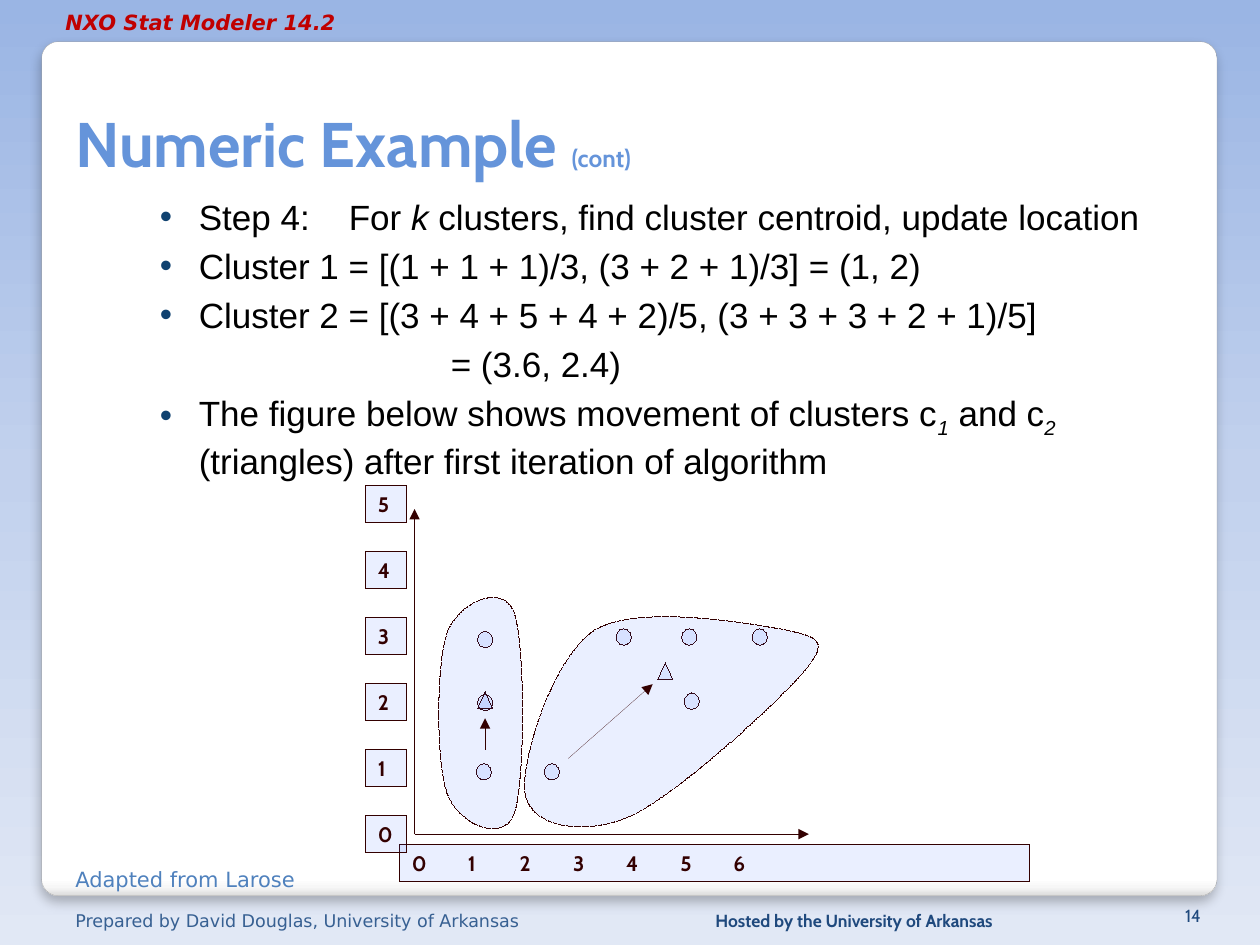
from lxml import etree
from pptx import Presentation, util as u
from pptx.dml.color import RGBColor
from pptx.enum import dml, shapes as kinds, text
from pptx.oxml.ns import qn

COLORS = {
    "ink": "000000", "title": "6594DA", "navy": "1F497D", "steel": "376092",
    "credit": "4F81BD", "red": "C00000", "bullet": "104270",
    "figure": "330000", "tint": "3366FF", "frame": "A4A4A4",
}
deck = Presentation()
deck.slide_width, deck.slide_height = u.Inches(10), u.Inches(7.5)
cell = deck.slide_width / 100
slide = deck.slides.add_slide(deck.slide_layouts[6])
canvas = slide.shapes


def draw_style(shape):
    shape.shadow.inherit = False
    shape.fill.solid()
    shape.fill.fore_color.rgb = RGBColor.from_string(COLORS["tint"])
    tint = shape._element.spPr.find(qn("a:solidFill"))[0]
    etree.SubElement(tint, qn("a:alpha"), val="10000")
    shape.line.color.rgb = RGBColor.from_string(COLORS["figure"])
    shape._element.spPr.find(qn("a:ln")).set("w", "0")


def write(paragraph, words, size, face, color, bold=False):
    paragraph.alignment = text.PP_ALIGN.LEFT
    font = paragraph.font
    font.size, font.name, font.bold = u.Pt(size), face, bold
    font.color.rgb = RGBColor.from_string(COLORS[color])
    for words_part, look in words:
        run = paragraph.add_run()
        run.text = words_part
        if "italic" in look:
            run.font.italic = True
        if "sub" in look:
            run._r.get_or_add_rPr().set("baseline", "-25000")


slide.background.fill.gradient()
panel = canvas.add_shape(kinds.MSO_SHAPE.ROUNDED_RECTANGLE,
                         *[int(n * cell) for n in (3.3, 3.3, 93.3, 67.8)])
panel.adjustments[0] = 0.02
panel.fill.gradient()
panel.line.color.rgb = RGBColor.from_string(COLORS["frame"])
panel.line.width = u.Pt(0.16)
panel.shadow.inherit = False

backdrop = slide.element.find(".//" + qn("p:bgPr"))
for owner, stops in (
    (backdrop, [(0, "9AB5E4"), (50, "C2D1ED"), (100, "E1E8F5")]),
    (panel._element.spPr, [(0, "FFFFFF"), (98, "FFFFFF"), (99, "F7F7F7"), (100, "DADADA")]),
):
    gradient = owner.find(qn("a:gradFill"))
    ramp = gradient.find(qn("a:gsLst"))
    for old in list(ramp):
        ramp.remove(old)
    for share, color in stops:
        stop = etree.SubElement(ramp, qn("a:gs"), pos=str(share * 1000))
        etree.SubElement(stop, qn("a:srgbClr"), val=color)
    gradient.find(qn("a:lin")).set("ang", "5400000")

effects = panel._element.spPr.find(qn("a:effectLst"))
shadow = etree.SubElement(effects, qn("a:outerShdw"), blurRad=str(u.Pt(6)),
                          dist=str(u.Pt(4)), dir="5400000", rotWithShape="0")
shade = etree.SubElement(shadow, qn("a:srgbClr"), val=COLORS["ink"])
etree.SubElement(shade, qn("a:alpha"), val="25000")

captions = [
    ((4.2, 0.3, 24.1, 3), "NXO Stat Modeler 14.2", 12, "DejaVu Sans", "red", True),
    ((5, 3.3, 89.5, 11.5), "Numeric Example ", 36, "Cabin", "title", True),
    ((55.8, 71.7, 34.2, 2.3), "Hosted by the University of Arkansas", 10, "Cabin", "navy", True),
    ((91.3, 71.7, 5, 2.3), "14", 10, "Cabin", "navy", False),
    ((5, 68.3, 28.3, 3), "Adapted from Larose", 12, "DejaVu Sans", "credit", False),
    ((5, 71.7, 44.6, 2.3), "Prepared by David Douglas, University of Arkansas", 10,
     "DejaVu Sans", "steel", False),
]
frames = []
for place, words, size, face, color, bold in captions:
    frame = canvas.add_textbox(*[int(n * cell) for n in place]).text_frame
    frame.word_wrap = True
    write(frame.paragraphs[0], [(words, "")], size, face, color, bold)
    frames.append(frame)
product, title, host, number = frames[:4]
product.word_wrap = False
product.auto_size = text.MSO_AUTO_SIZE.SHAPE_TO_FIT_TEXT
product.paragraphs[0].font.italic = True
title.vertical_anchor = number.vertical_anchor = text.MSO_ANCHOR.BOTTOM
number.paragraphs[0].alignment = text.PP_ALIGN.RIGHT
continued = title.paragraphs[0].add_run()
continued.text = "(cont)"
continued.font.size = u.Pt(14)

steps = [
    [("Step 4:\tFor ", ""), ("k", "italic"), (" clusters, find cluster centroid, update location", "")],
    [("Cluster 1 = [(1 + 1 + 1)/3, (3 + 2 + 1)/3] = (1, 2)", "")],
    [("Cluster 2 = [(3 + 4 + 5 + 4 + 2)/5, (3 + 3 + 3 + 2 + 1)/5]", "")],
    [("= (3.6, 2.4)", "")],
    [("The figure below shows movement of clusters c", ""), ("1", "italic sub"), (" and c", ""),
     ("2 ", "italic sub"), ("(triangles) after first iteration of algorithm", "")],
]
body = canvas.add_textbox(*[int(n * cell) for n in (6.7, 15, 86.7, 23.9)]).text_frame
body.word_wrap = True
for index, words in enumerate(steps):
    step = body.paragraphs[0] if index == 0 else body.add_paragraph()
    write(step, words, 20, "Arial", "ink")
    step.space_before = u.Pt(4)
    layout = step._p.get_or_add_pPr()
    continuation = words[0][0].startswith("=")
    layout.set("marL", str(int((28.1 if continuation else 8.1) * cell)))
    layout.set("indent", str(0 if continuation else int(-3.1 * cell)))
    if not continuation:
        bullet_color = etree.Element(qn("a:buClr"))
        etree.SubElement(bullet_color, qn("a:srgbClr"), val=COLORS["bullet"])
        defaults = layout.find(qn("a:defRPr"))
        for part in (bullet_color, etree.Element(qn("a:buFont"), typeface="Arial"),
                     etree.Element(qn("a:buChar"), char="•")):
            defaults.addprevious(part)

axis_labels = [((31.7, 67, 50, 3), "\t".join(str(n) for n in range(7)))]
axis_labels += [((29, 64.7 - 5.24 * n, 3.3, 3), str(n)) for n in range(6)]
for place, words in axis_labels:
    label = canvas.add_shape(kinds.MSO_SHAPE.RECTANGLE, *[int(n * cell) for n in place])
    draw_style(label)
    label.text_frame.vertical_anchor = text.MSO_ANCHOR.TOP
    tick = label.text_frame.paragraphs[0]
    write(tick, [(words, "")], 12, "Cabin", "figure", True)
    if "\t" in words:
        tabs = etree.Element(qn("a:tabLst"))
        for n in range(1, 7):
            etree.SubElement(tabs, qn("a:tab"), pos=str(int((0.5 + 4.25 * n) * cell)), algn="ctr")
        tick._p.pPr.find(qn("a:defRPr")).addprevious(tabs)

points = [(37.8, 60.6), (37.9, 55.1), (37.9, 50.1), (43.2, 60.6),
          (48.9, 49.9), (54.1, 49.9), (59.7, 49.9), (54.3, 55)]
centroids = [(37.9, 54.9), (52.2, 52.6)]
for preset, spots in ((kinds.MSO_SHAPE.OVAL, points),
                      (kinds.MSO_SHAPE.ISOSCELES_TRIANGLE, centroids)):
    for x, y in spots:
        draw_style(canvas.add_shape(preset, *[int(n * cell) for n in (x, y, 1.2, 1.3)]))

clusters = [
    [(35.5, 63),
     (34.6, 60.6), (34.6, 52.6), (35.5, 50.2),
     (36.4, 47.8), (39.9, 46.2), (40.8, 48.6),
     (41.7, 51), (41.7, 62.2), (40.8, 64.6),
     (39.9, 67), (36.4, 65.4), (35.5, 63)],
    [(41.7, 63.1),
     (41.2, 60.7), (43.8, 52.2), (47.2, 50),
     (50.7, 47.9), (59.6, 49.5), (62.4, 50),
     (65.1, 50.6), (65.8, 50.9), (63.8, 53.3),
     (61.7, 55.8), (53.7, 63.1), (50, 64.8),
     (46.3, 66.4), (42.2, 65.6), (41.7, 63.1)],
]
for rim in clusters:
    start, *bends = [(round(x * 10), round(y * 10)) for x, y in rim]
    builder = canvas.build_freeform(*start, scale=cell / 10)
    builder.add_line_segments(bends, close=True)
    cluster = builder.convert_to_shape()
    segments = list(cluster._element.iter(qn("a:lnTo")))
    for first in range(0, len(bends), 3):
        curve = etree.Element(qn("a:cubicBezTo"))
        segments[first].addprevious(curve)
        for segment in segments[first:first + 3]:
            curve.append(segment[0])
            segment.getparent().remove(segment)
    draw_style(cluster)
    cluster.line.dash_style = dml.MSO_LINE.ROUND_DOT

arrows = [(32.9, 66.2, 32.9, 40.4), (32.9, 66.2, 64.2, 66.2),
          (38.5, 59.5, 38.5, 57), (45.1, 60.2, 51.8, 54.3)]
for ends in arrows:
    arrow = canvas.add_connector(kinds.MSO_CONNECTOR.STRAIGHT, *[int(n * cell) for n in ends])
    arrow.line.color.rgb = RGBColor.from_string(COLORS["figure"])
    stroke = arrow._element.spPr.find(qn("a:ln"))
    stroke.set("w", "0")
    etree.SubElement(stroke, qn("a:tailEnd"), type="triangle")
    etree.SubElement(arrow._element.spPr, qn("a:effectLst"))

deck.save("out.pptx")
